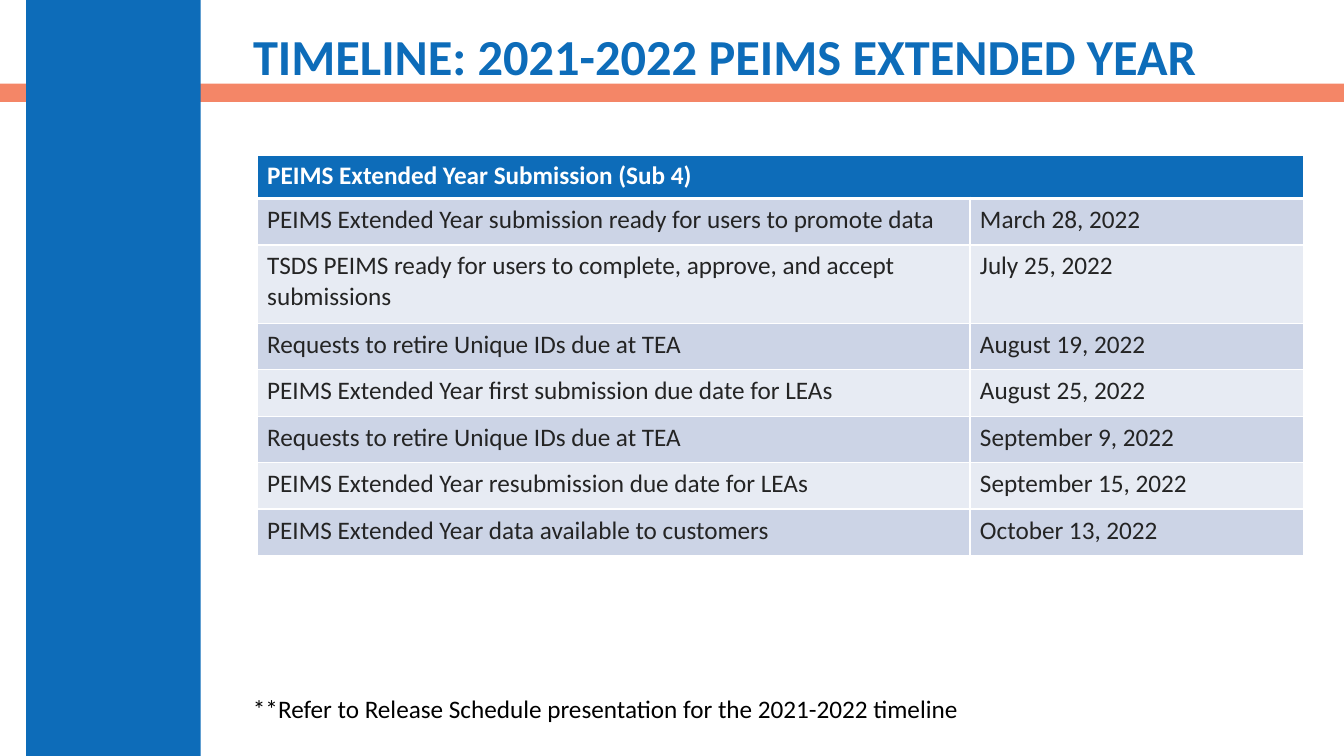
from lxml import etree
from pptx import Presentation
from pptx.dml.color import RGBColor
from pptx.enum.shapes import MSO_SHAPE
from pptx.enum.text import MSO_ANCHOR, PP_ALIGN
from pptx.oxml import parse_xml
from pptx.oxml.ns import nsdecls, qn
from pptx.util import Inches, Pt

BLUE = RGBColor(0x0D, 0x6C, 0xB9)
CORAL = RGBColor(0xF1, 0x60, 0x38)
INK = RGBColor(0x24, 0x24, 0x24)
BLACK = RGBColor(0, 0, 0)
WHITE = RGBColor(0xFF, 0xFF, 0xFF)
ROW_FILLS = (RGBColor(0xCC, 0xD4, 0xE6), RGBColor(0xE7, 0xEB, 0xF3))

FONT = "Calibri"
SLIDE_WIDTH, SLIDE_HEIGHT = 13.33, 7.5
COLUMN_WIDTHS = (7.07, 3.31)
HEADER_HEIGHT, ROW_HEIGHT, TALL_ROW_HEIGHT = 0.43, 0.46, 0.78

TITLE = "TIMELINE: 2021-2022 PEIMS EXTENDED YEAR"
TABLE_HEADING = "PEIMS Extended Year Submission (Sub 4)"
MILESTONES = [
    ("PEIMS Extended Year submission ready for users to promote data", "March 28, 2022"),
    ("TSDS PEIMS ready for users to complete, approve, and accept submissions",
     "July 25, 2022"),
    ("Requests to retire Unique IDs due at TEA", "August 19, 2022"),
    ("PEIMS Extended Year first submission due date for LEAs", "August 25, 2022"),
    ("Requests to retire Unique IDs due at TEA", "September 9, 2022"),
    ("PEIMS Extended Year resubmission due date for LEAs", "September 15, 2022"),
    ("PEIMS Extended Year data available to customers", "October 13, 2022"),
]
TALL_ROW = 2
FOOTNOTE = "**Refer to Release Schedule presentation for the 2021-2022 timeline"


def inches(box):
    return [Inches(length) for length in box]


def format_text(paragraph, size, color, bold=False):
    for run in paragraph.runs:
        run.font.name = FONT
        run.font.size = Pt(size)
        run.font.bold = bold
        run.font.color.rgb = color


def add_band(slide, box, color, opacity=100):
    band = slide.shapes.add_shape(MSO_SHAPE.RECTANGLE, *inches(box))
    band.shadow.inherit = False
    band.fill.solid()
    band.fill.fore_color.rgb = color
    band.line.fill.background()
    if opacity < 100:
        rgb = band.element.spPr.find(qn("a:solidFill"))[0]
        etree.SubElement(rgb, qn("a:alpha"), val=str(opacity * 1000))


def place_title(slide, box):
    title = slide.shapes.title
    title.left, title.top, title.width, title.height = inches(box)
    frame = title.text_frame
    frame.text = TITLE
    frame.word_wrap = True
    frame.vertical_anchor = MSO_ANCHOR.MIDDLE
    heading = frame.paragraphs[0]
    heading.alignment = PP_ALIGN.LEFT
    heading.line_spacing = 0.9
    format_text(heading, 36, BLUE, bold=True)
    # Bring the title in front of the bands
    title.element.getparent().append(title.element)


def set_borders(cell, top=1, bottom=1):
    properties = cell._tc.get_or_add_tcPr()
    widths = {"lnL": 1, "lnR": 1, "lnT": top, "lnB": bottom}
    for position, (side, width) in enumerate(widths.items()):
        properties.insert(position, parse_xml(
            f'<a:{side} {nsdecls("a")} w="{Pt(width)}"><a:solidFill>'
            f'<a:srgbClr val="{WHITE}"/></a:solidFill></a:{side}>'))


def fill_cell(cell, text, fill, color, bold=False):
    cell.text = text
    cell.fill.solid()
    cell.fill.fore_color.rgb = fill
    format_text(cell.text_frame.paragraphs[0], 18, color, bold)


def add_milestone_table(slide, left, top):
    heights = [HEADER_HEIGHT] + [ROW_HEIGHT] * len(MILESTONES)
    heights[TALL_ROW] = TALL_ROW_HEIGHT
    box = (left, top, sum(COLUMN_WIDTHS), sum(heights))
    table = slide.shapes.add_table(len(heights), len(COLUMN_WIDTHS), *inches(box)).table
    for column, width in zip(table.columns, COLUMN_WIDTHS):
        column.width = Inches(width)
    for row, height in zip(table.rows, heights):
        row.height = Inches(height)

    # Heading across both columns
    table.cell(0, 0).merge(table.cell(0, 1))
    fill_cell(table.cell(0, 0), TABLE_HEADING, BLUE, WHITE, bold=True)
    for cell in table.rows[0].cells:
        set_borders(cell, bottom=3)

    # Milestones and dates
    for index, milestone in enumerate(MILESTONES):
        for cell, text in zip(table.rows[index + 1].cells, milestone):
            fill_cell(cell, text, ROW_FILLS[index % 2], INK)
            cell.margin_top = cell.margin_bottom = Inches(0.06)
            set_borders(cell, top=3 if index == 0 else 1)


def add_footnote(slide, box):
    frame = slide.shapes.add_textbox(*inches(box)).text_frame
    frame.word_wrap = True
    frame.text = FOOTNOTE
    format_text(frame.paragraphs[0], 18, BLACK)


def build_timeline_slide(presentation):
    slide = presentation.slides.add_slide(presentation.slide_layouts[5])
    # Background bands
    add_band(slide, (0, 0.83, SLIDE_WIDTH, 0.18), CORAL, opacity=76)
    add_band(slide, (0.26, 0, 1.73, SLIDE_HEIGHT), BLUE)
    # Content
    place_title(slide, (2.41, 0.18, 10.53, 0.82))
    add_footnote(slide, (2.41, 6.83, 10.25, 0.4))
    add_milestone_table(slide, 2.55, 1.54)


def main():
    presentation = Presentation()
    presentation.slide_width = Inches(SLIDE_WIDTH)
    presentation.slide_height = Inches(SLIDE_HEIGHT)
    build_timeline_slide(presentation)
    presentation.save("out.pptx")


if __name__ == "__main__":
    main()
